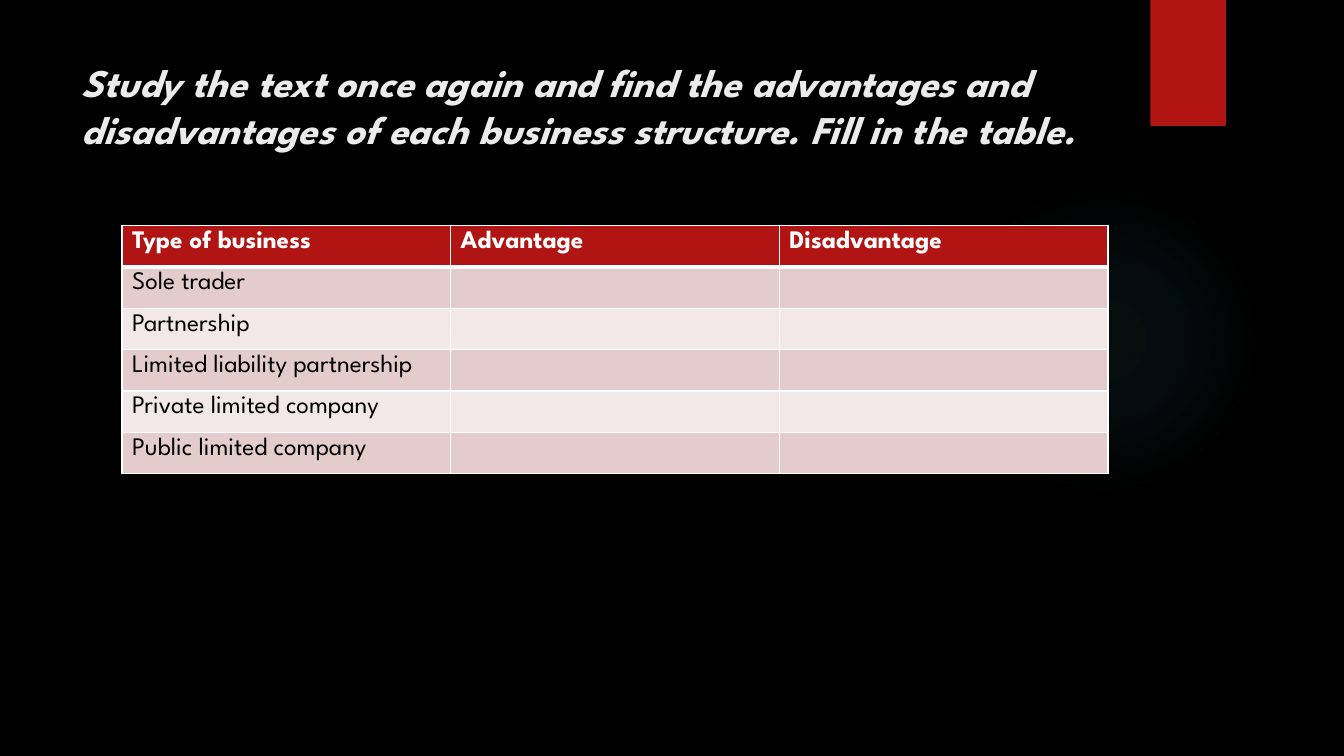
from lxml import etree
from pptx import Presentation
from pptx.dml.color import RGBColor
from pptx.enum import shapes, text
from pptx.oxml import ns, parse_xml
from pptx.util import Inches, Pt

TITLE = ("Study the text once again and find the advantages and "
         "disadvantages of each business structure. Fill in the table.")
HEADERS = ["Type of business", "Advantage", "Disadvantage"]
BUSINESS_TYPES = ["Sole trader", "Partnership", "Limited liability partnership",
                  "Private limited company", "Public limited company"]

FONT = "League Spartan"
BLACK = RGBColor(0, 0, 0)
WHITE = RGBColor(0xFF, 0xFF, 0xFF)
TITLE_GREY = RGBColor(0xEB, 0xEB, 0xEB)
RED = RGBColor(0xB0, 0x15, 0x13)
BANDS = [RGBColor(0xE4, 0xCC, 0xCC), RGBColor(0xF2, 0xE8, 0xE7)]
GLOW = RGBColor(0x50, 0xB9, 0xC1)
GLOW_STOPS = [(0, 7), (36, 6), (69, 0)]  # position and opacity, percent

COLUMN_WIDTH = 3.26
ROW_HEIGHT = 0.41


def add_plain_shape(slide, kind, left, top, width, height):
    shape = slide.shapes.add_shape(
        kind, Inches(left), Inches(top), Inches(width), Inches(height))
    shape.shadow.inherit = False
    shape.line.fill.background()
    return shape


def set_glow(shape):
    """Fill the shape with a radial gradient that fades outwards."""
    stops = "".join(
        f'<a:gs pos="{position * 1000}"><a:srgbClr val="{GLOW}">'
        f'<a:alpha val="{opacity * 1000}"/></a:srgbClr></a:gs>'
        for position, opacity in GLOW_STOPS)
    gradient = parse_xml(
        f'<a:gradFill {ns.nsdecls("a")}><a:gsLst>{stops}</a:gsLst>'
        '<a:path path="circle"><a:fillToRect l="50000" t="50000" r="50000" b="50000"/>'
        '</a:path></a:gradFill>')
    shape.fill.background()
    no_fill = shape._element.spPr.find(ns.qn("a:noFill"))
    no_fill.getparent().replace(no_fill, gradient)


def set_borders(cell, widths):
    """Draw white borders; widths are points for left, right, top, bottom."""
    properties = cell._tc.get_or_add_tcPr()
    for index, (side, width) in enumerate(zip("LRTB", widths)):
        line = etree.Element(ns.qn(f"a:ln{side}"), w=str(Pt(width)))
        fill = etree.SubElement(line, ns.qn("a:solidFill"))
        etree.SubElement(fill, ns.qn("a:srgbClr"), val=str(WHITE))
        properties.insert(index, line)


def format_text(frame, size, color, bold, italic=False):
    for paragraph in frame.paragraphs:
        for run in paragraph.runs:
            run.font.name = FONT
            run.font.size = Pt(size)
            run.font.bold = bold
            run.font.italic = italic
            run.font.color.rgb = color


def add_title(slide):
    title = slide.shapes.title
    title.left, title.top = Inches(0.71), Inches(0.5)
    title.width, title.height = Inches(10.29), Inches(1.53)
    frame = title.text_frame
    frame.text = TITLE
    frame.word_wrap = True
    frame.auto_size = text.MSO_AUTO_SIZE.NONE
    frame.vertical_anchor = text.MSO_ANCHOR.TOP
    frame.margin_top = Inches(0.08)
    frame.paragraphs[0].alignment = text.PP_ALIGN.LEFT
    frame.paragraphs[0].line_spacing = 1.0
    format_text(frame, 28, TITLE_GREY, bold=True, italic=True)


def add_business_table(slide):
    rows = [HEADERS] + [[name, "", ""] for name in BUSINESS_TYPES]
    table = slide.shapes.add_table(
        len(rows), len(HEADERS), Inches(1.21), Inches(2.24),
        Inches(COLUMN_WIDTH * len(HEADERS)), Inches(ROW_HEIGHT * len(rows))).table
    for row_index, row in enumerate(rows):
        table.rows[row_index].height = Inches(ROW_HEIGHT)
        is_header = row_index == 0
        for column_index, label in enumerate(row):
            cell = table.cell(row_index, column_index)
            cell.text_frame.text = label
            cell.fill.solid()
            cell.fill.fore_color.rgb = RED if is_header else BANDS[(row_index - 1) % 2]
            format_text(cell.text_frame, 18, WHITE if is_header else BLACK, is_header)
            set_borders(cell, (1, 1, 3 if row_index == 1 else 1, 3 if is_header else 1))
    for column in table.columns:
        column.width = Inches(COLUMN_WIDTH)


def main():
    presentation = Presentation()
    presentation.slide_width = Inches(13.33)
    presentation.slide_height = Inches(7.5)
    slide = presentation.slides.add_slide(presentation.slide_layouts[5])
    slide.background.fill.solid()
    slide.background.fill.fore_color.rgb = BLACK

    set_glow(add_plain_shape(slide, shapes.MSO_SHAPE.OVAL, 9.41, 1.83, 3.08, 3.08))
    ribbon = add_plain_shape(slide, shapes.MSO_SHAPE.RECTANGLE, 11.41, 0, 0.75, 1.25)
    ribbon.fill.solid()
    ribbon.fill.fore_color.rgb = RED
    add_title(slide)
    add_business_table(slide)
    presentation.save("out.pptx")


if __name__ == "__main__":
    main()
